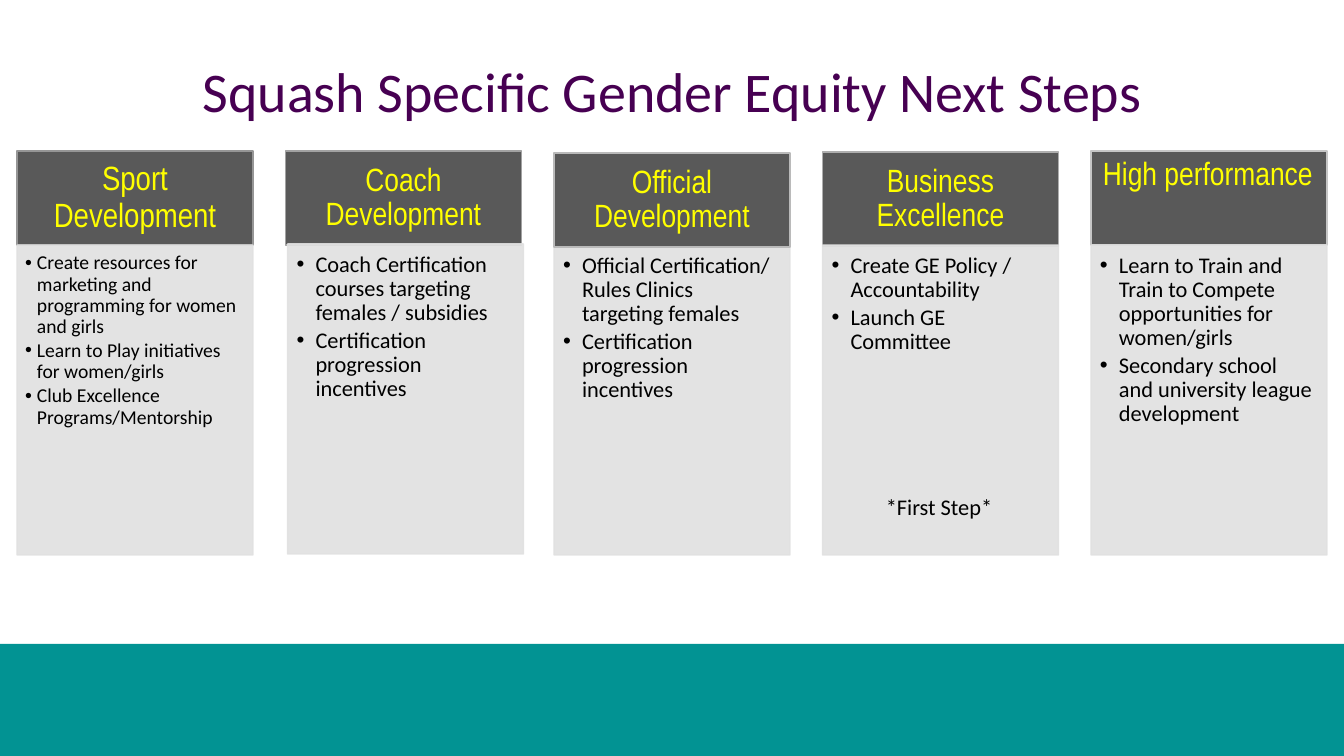
import pptx
import pptx.util
import pptx.dml.color
import pptx.enum.shapes
import pptx.enum.text
from lxml import etree

TITLE = "Squash Specific Gender Equity Next Steps"

# top: header top, nudge: body shift, inset: left, top, right, bottom of each part
COLUMNS = [
    dict(head="Sport Development", top=151, head_size=24, head_inset=(19, 11, 19, 11), edge="969696",
         nudge=(0, 0), size=14, indent=12, inset=(8, 8, 11, 12),
         steps=["Create resources for marketing and programming for women and girls",
                "Learn to Play initiatives for women/girls",
                "Club Excellence Programs/Mentorship"]),
    dict(head="Coach Development", top=151, edge="A2A2A2", nudge=(2, -1),
         steps=["Coach Certification courses targeting females / subsidies",
                "Certification progression incentives"]),
    dict(head="Official Development", top=153, edge="BABABA", head_in_front=True,
         steps=["Official Certification/ Rules Clinics targeting females",
                "Certification progression incentives"]),
    dict(head="Business Excellence", top=152, edge="AEAEAE",
         steps=["Create GE Policy / Accountability", "Launch GE Committee"],
         closing="*First Step*"),
    dict(head="High performance", top=151, edge="C6C6C6", head_inset=(10, 7, 12, 0), head_anchor="TOP",
         steps=["Learn to Train and Train to Compete opportunities for women/girls",
                "Secondary school and university league development"]),
]
DEFAULTS = dict(head_size=23, head_inset=(18, 10, 18, 10), head_anchor="MIDDLE", head_in_front=False,
                nudge=(0, 0), size=16, indent=19, inset=(9, 9, 12, 14), closing=None)

LEFT, PITCH, WIDTH = 17, 268.5, 236
HEAD_HEIGHT, BODY_TOP, BODY_HEIGHT = 94, 245, 310
BAND_TOP, SLIDE_W, SLIDE_H = 644, 1344, 756

NS = "http://schemas.openxmlformats.org/drawingml/2006/main"
CENTER = pptx.enum.text.PP_ALIGN.CENTER
LEFT_ALIGN = pptx.enum.text.PP_ALIGN.LEFT


def px(value):
    return pptx.util.Emu(round(value * 914400 / 100.8))


def color(hex_code):
    return pptx.dml.color.RGBColor.from_string(hex_code)


def add_rect(x, y, w, h, fill, edge=None, opacity=None):
    rect = slide.shapes.add_shape(pptx.enum.shapes.MSO_SHAPE.RECTANGLE, px(x), px(y), px(w), px(h))
    rect.shadow.inherit = False
    rect.fill.solid()
    rect.fill.fore_color.rgb = color(fill)
    if edge:
        rect.line.color.rgb = color(edge)
        rect.line.width = pptx.util.Pt(1)
    else:
        rect.line.fill.background()
    if opacity:
        for solid in rect.element.spPr.iter(f"{{{NS}}}srgbClr"):
            etree.SubElement(solid, f"{{{NS}}}alpha", val=str(opacity * 1000))
    return rect


def set_frame(frame, inset, anchor):
    frame.word_wrap = True
    frame.vertical_anchor = anchor
    (frame.margin_left, frame.margin_top,
     frame.margin_right, frame.margin_bottom) = (px(side) for side in inset)


def style(paragraph, size, font, ink, align):
    paragraph.alignment = align
    paragraph.line_spacing = 0.9
    paragraph.font.size = pptx.util.Pt(size)
    paragraph.font.name = font
    paragraph.font.color.rgb = color(ink)


def add_header(column, x):
    header = add_rect(x, column["top"], WIDTH, HEAD_HEIGHT, "595959", column["edge"])
    frame = header.text_frame
    set_frame(frame, column["head_inset"], getattr(pptx.enum.text.MSO_ANCHOR, column["head_anchor"]))
    frame.text = column["head"]
    style(frame.paragraphs[0], column["head_size"], "Arial Narrow", "FFFF00", CENTER)


def add_body(column, x):
    dx, dy = column["nudge"]
    body = add_rect(x + dx, BODY_TOP + dy, WIDTH, BODY_HEIGHT, "E1E1E1", "E1E1E1", 90)
    frame = body.text_frame
    set_frame(frame, column["inset"], pptx.enum.text.MSO_ANCHOR.TOP)
    closing = column["closing"]
    frame.text = "\n".join(column["steps"] + ([closing] if closing else []))
    for paragraph in frame.paragraphs:
        is_closing = paragraph.text == closing
        props = paragraph._p.get_or_add_pPr()
        props.set("marL", str(px(column["indent"])))
        props.set("indent", str(-px(column["indent"])))
        if not is_closing:
            etree.SubElement(props, f"{{{NS}}}buFont", typeface="Arial")
            etree.SubElement(props, f"{{{NS}}}buChar", char="•")
        style(paragraph, column["size"], "Calibri", "000000", CENTER if is_closing else LEFT_ALIGN)
        paragraph.space_after = pptx.util.Pt(round(column["size"] * 0.15, 1))
        if is_closing:
            paragraph.space_before = pptx.util.Pt(99)


prs = pptx.Presentation()
prs.slide_width, prs.slide_height = px(SLIDE_W), px(SLIDE_H)
slide = prs.slides.add_slide(prs.slide_layouts[6])

# Footer band and title
add_rect(0, BAND_TOP, SLIDE_W, SLIDE_H - BAND_TOP, "029393")
title = slide.shapes.add_textbox(px(34), px(59), px(1276), px(53)).text_frame
set_frame(title, (10, 5, 10, 5), pptx.enum.text.MSO_ANCHOR.TOP)
title.text = TITLE
style(title.paragraphs[0], 40, "Calibri", "470052", CENTER)

# Columns: a dark header over a light body
for index, entry in enumerate(COLUMNS):
    column = {**DEFAULTS, **entry}
    parts = [add_header, add_body]
    if column["head_in_front"]:
        parts.reverse()
    for add_part in parts:
        add_part(column, LEFT + index * PITCH)

prs.save("out.pptx")
